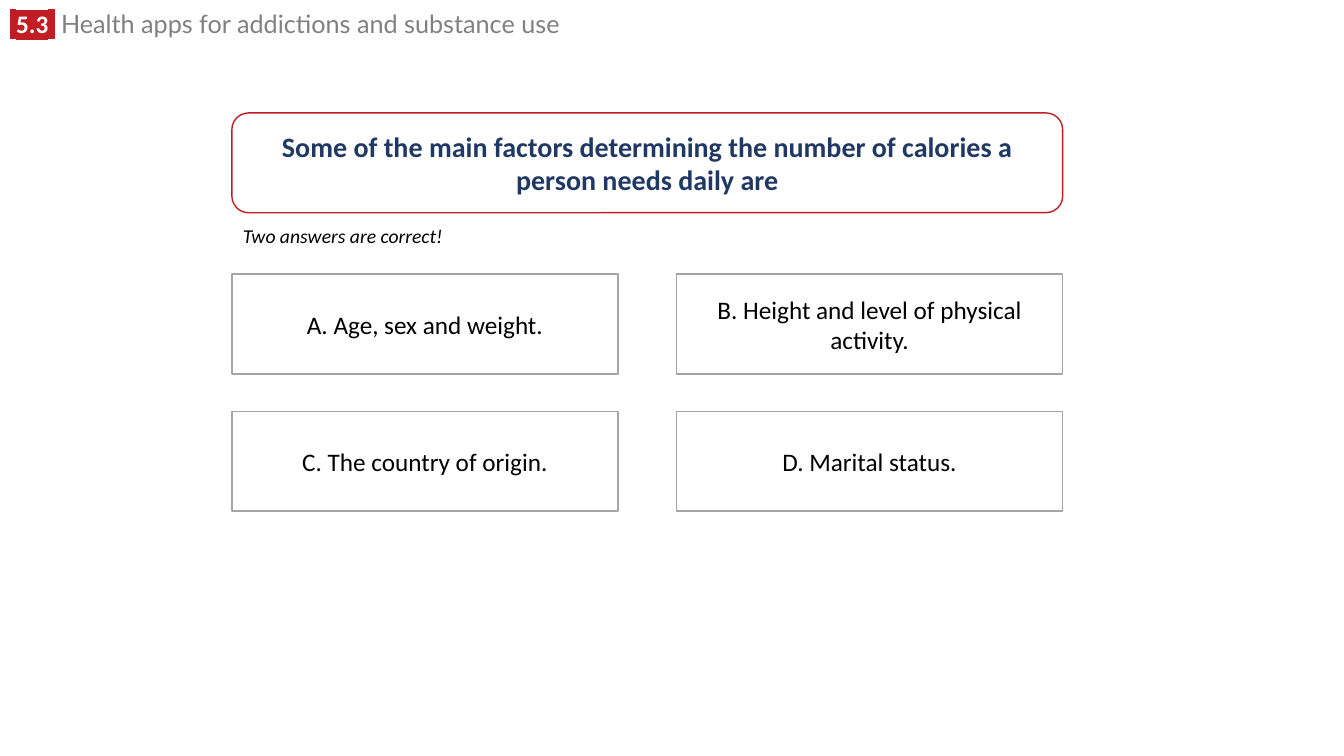
from lxml import etree
from pptx import Presentation
from pptx.dml.color import RGBColor
from pptx.enum.shapes import MSO_SHAPE as Shape
from pptx.enum.text import MSO_ANCHOR as Anchor, MSO_AUTO_SIZE as AutoSize, PP_ALIGN as Align
from pptx.oxml.ns import qn
from pptx.util import Inches, Pt

COLORS = {
    "white": "FFFFFF",
    "red": "C01E24",
    "heading": "808080",
    "question": "203864",
    "border": "A5A5A5",
    "black": "000000",
}


def format_run(run, size, color, name="Calibri", bold=False, italic=False, highlight=None):
    font = run.font
    font.color.rgb = RGBColor.from_string(COLORS[color])
    if highlight:
        element = etree.SubElement(run._r.get_or_add_rPr(), qn("a:highlight"))
        etree.SubElement(element, qn("a:srgbClr"), val=COLORS[highlight])
    font.name = name
    font.size = Pt(size)
    font.bold = bold
    font.italic = italic


def add_box(kind, left, top, width, text, border, size, color, bold=False):
    shape = slide.shapes.add_shape(kind, Inches(left), Inches(top), Inches(width), Inches(0.99))
    shape.shadow.inherit = False
    shape.fill.solid()
    shape.fill.fore_color.rgb = RGBColor.from_string(COLORS["white"])
    shape.line.color.rgb = RGBColor.from_string(COLORS[border])
    shape.line.width = Pt(1)
    frame = shape.text_frame
    frame.text = text
    frame.word_wrap = True
    frame.vertical_anchor = Anchor.MIDDLE
    paragraph = frame.paragraphs[0]
    paragraph.alignment = Align.CENTER
    format_run(paragraph.runs[0], size, color, bold=bold)


presentation = Presentation()
presentation.slide_width = Inches(13.33)
presentation.slide_height = Inches(7.5)
slide = presentation.slides.add_slide(presentation.slide_layouts[5])

title = slide.shapes.title
title.left, title.top = Inches(0), Inches(0.09)
title.width, title.height = Inches(9.52), Inches(0.35)
title.text_frame.vertical_anchor = Anchor.TOP
title.text_frame.auto_size = AutoSize.SHAPE_TO_FIT_TEXT
heading = title.text_frame.paragraphs[0]
heading.alignment = Align.LEFT
heading.line_spacing = 0.8
for text, name in [(" ", "Lato"), ("5.3", "Calibri"), (" ", "Lato")]:
    run = heading.add_run()
    run.text = text
    format_run(run, 18, "white", name, bold=True, highlight="red")
run = heading.add_run()
run.text = " Health apps for addictions and substance use"
format_run(run, 18, "heading", "Lato")

add_box(Shape.ROUNDED_RECTANGLE, 2.3, 1.12, 8.24,
        "Some of the main factors determining the number of calories a person needs daily are",
        "red", 20, "question", bold=True)

hint = slide.shapes.add_textbox(Inches(2.31), Inches(2.17), Inches(2.24), Inches(0.34))
hint.text_frame.text = "Two answers are correct!"
hint.text_frame.word_wrap = False
hint.text_frame.auto_size = AutoSize.SHAPE_TO_FIT_TEXT
format_run(hint.text_frame.paragraphs[0].runs[0], 14, "black", italic=True)

answers = [
    "A. Age, sex and weight.",
    "B. Height and level of physical activity.",
    "C. The country of origin.",
    "D. Marital status.",
]
for index, answer in enumerate(answers):
    row, column = divmod(index, 2)
    add_box(Shape.RECTANGLE, 2.3 + 4.41 * column, 2.72 + 1.36 * row, 3.83,
            answer, "border", 18, "black")

presentation.save("out.pptx")
